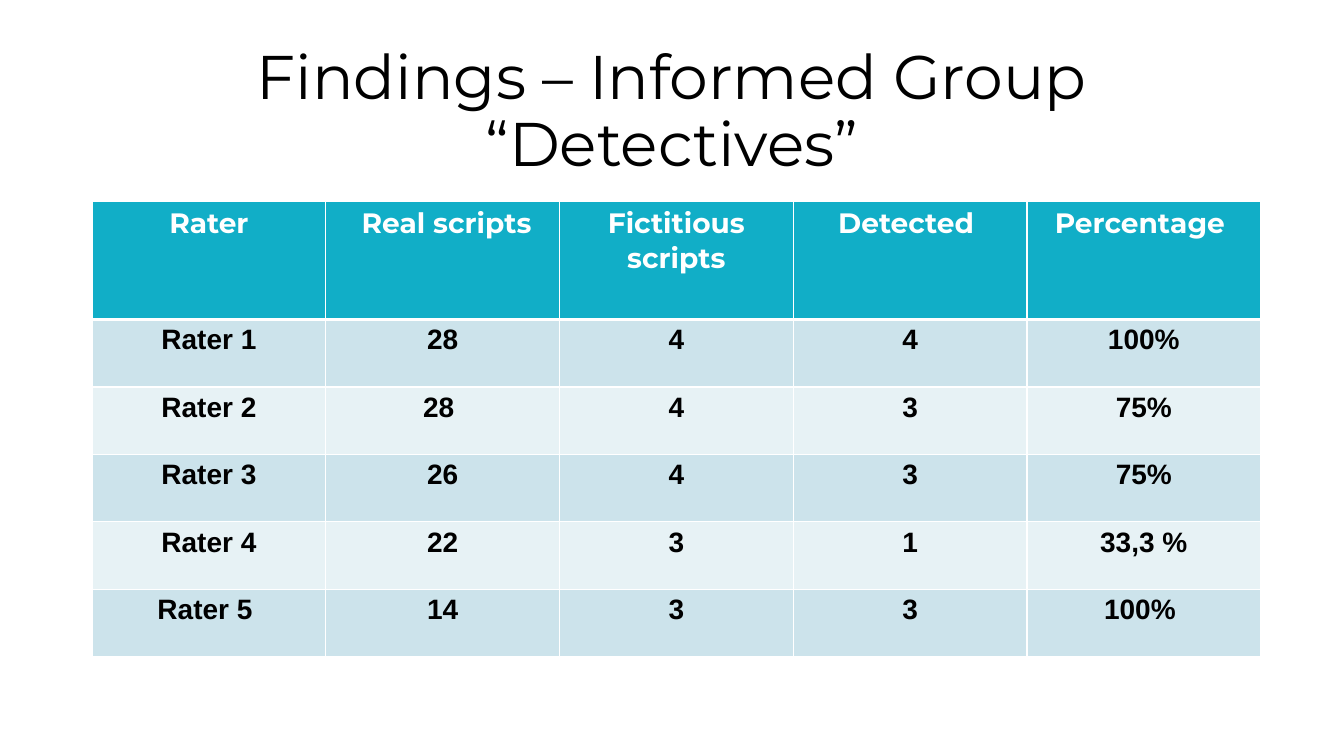
"""Build the slide with the informed group's detection results."""
from dataclasses import dataclass

from lxml.etree import SubElement
from pptx import Presentation
from pptx.dml.color import RGBColor
from pptx.enum.text import MSO_ANCHOR, PP_ALIGN
from pptx.oxml.ns import qn
from pptx.util import Cm, Pt


@dataclass(frozen=True)
class Theme:
    heading_font: str = "Montserrat"
    body_font: str = "Arial"
    title_size: int = 44
    table_size: int = 20
    ink: str = "000000"
    white: str = "FFFFFF"
    header_fill: str = "11AEC7"
    bands: tuple = ("CCE3EB", "E7F2F5")


theme = Theme()


def write(para, text, color, **font_values):
    """Add one centred span to a paragraph."""
    para.alignment = PP_ALIGN.CENTER
    span = para.add_run()
    span.text = text
    span.font.color.rgb = RGBColor.from_string(color)
    for name, value in font_values.items():
        setattr(span.font, name, value)


def add_border(cell, side, width):
    """Draw one white border line on a cell."""
    line = SubElement(cell._tc.get_or_add_tcPr(), qn(f"a:ln{side}"), w=str(Pt(width)))
    fill = SubElement(line, qn("a:solidFill"))
    SubElement(fill, qn("a:srgbClr"), val=theme.white)


deck = Presentation()
deck.slide_width, deck.slide_height = Cm(33.87), Cm(19.05)
page = deck.slides.add_slide(deck.slide_layouts[6])

title_box = page.shapes.add_textbox(Cm(2.33), Cm(1.01), Cm(29.21), Cm(3.68))
frame_format = {"word_wrap": True, "vertical_anchor": MSO_ANCHOR.MIDDLE}
for name, value in frame_format.items():
    setattr(title_box.text_frame, name, value)
title_para = title_box.text_frame.paragraphs[0]
title_para.line_spacing = 0.9
write(title_para, "Findings – Informed Group “Detectives”", theme.ink,
      name=theme.heading_font, size=Pt(theme.title_size))

findings = [
    ["Rater", " Real scripts", "Fictitious scripts", "Detected ", "Percentage "],
    ["Rater 1", "28", "4", "4", "100%"],
    ["Rater 2", "28 ", "4", "3", "75%"],
    ["Rater 3", "26", "4", "3", "75%"],
    ["Rater 4", "22", "3", "1", "33,3 %"],
    ["Rater 5 ", "14", "3", "3", "100% "],
]
column_width, header_height, row_height = 5.89, 2.97, 1.7
row_count, column_count = len(findings), len(findings[0])
table = page.shapes.add_table(
    row_count, column_count, Cm(2.32), Cm(5.08), Cm(column_width * column_count),
    Cm(header_height + row_height * (row_count - 1))).table
for column in table.columns:
    column.width = Cm(column_width)

for row_index, texts in enumerate(findings):
    is_header = row_index == 0
    table.rows[row_index].height = Cm(header_height if is_header else row_height)
    fill_color = theme.header_fill if is_header else theme.bands[(row_index - 1) % 2]
    text_color = theme.white if is_header else theme.ink
    font_name = theme.heading_font if is_header else theme.body_font
    border_widths = {"L": 1, "R": 1, "T": 3 if row_index == 1 else 1, "B": 3 if is_header else 1}
    for column_index, text in enumerate(texts):
        cell = table.cell(row_index, column_index)
        for side, width in border_widths.items():
            add_border(cell, side, width)
        cell.fill.solid()
        cell.fill.fore_color.rgb = RGBColor.from_string(fill_color)
        write(cell.text_frame.paragraphs[0], text, text_color,
              name=font_name, size=Pt(theme.table_size), bold=True)

deck.save("out.pptx")
